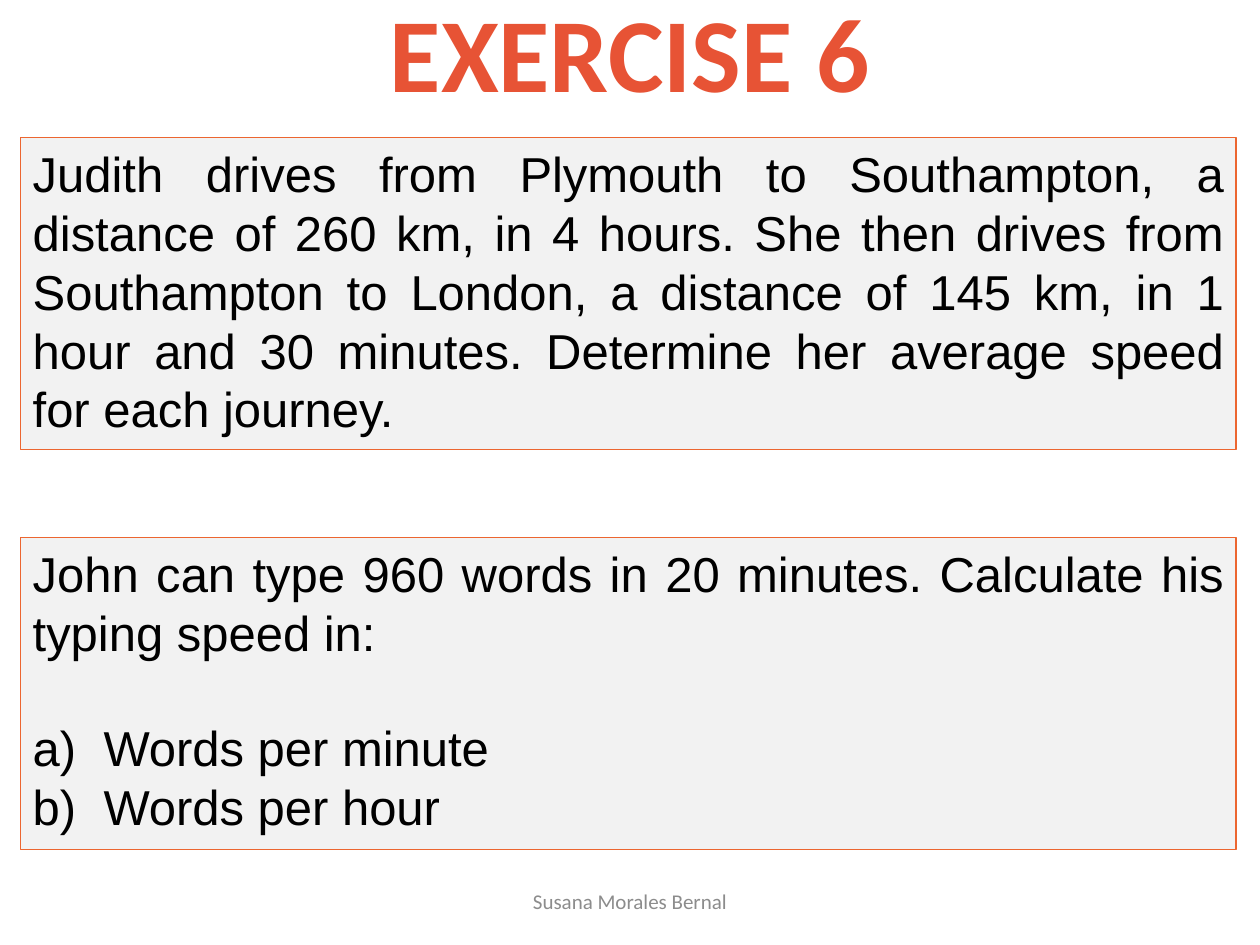
from dataclasses import dataclass

from lxml import etree
from pptx import Presentation
from pptx.dml.color import RGBColor
from pptx.enum import shapes, text
from pptx.oxml import ns
from pptx.util import Cm, Pt


@dataclass(frozen=True)
class Theme:
    title_color: RGBColor = RGBColor(0xE7, 0x53, 0x35)
    body_color: RGBColor = RGBColor(0, 0, 0)
    footer_color: RGBColor = RGBColor(0x8C, 0x8C, 0x8C)
    panel_fill: RGBColor = RGBColor(0xF2, 0xF2, 0xF2)
    panel_line: RGBColor = RGBColor(0xEC, 0x66, 0x30)
    heading_font: str = "Calibri"
    body_font: str = "Arial"
    title_size: Pt = Pt(60)
    body_size: Pt = Pt(28)
    footer_size: Pt = Pt(12)
    list_gap: Pt = Pt(32.2)
    line_width: Pt = Pt(0.75)


THEME = Theme()
PANEL_LEFT, PANEL_WIDTH, PANEL_HEIGHT = Cm(0.41), Cm(24.51), Cm(6.3)
LIST_INDENT = Cm(1.43)

JOURNEY = (
    "Judith drives from Plymouth to Southampton, a distance of 260 km, in 4 hours. "
    "She then drives from Southampton to London, a distance of 145 km, in 1 hour and "
    "30 minutes. Determine her average speed for each journey."
)
TYPING = "John can type 960 words in 20 minutes. Calculate his typing speed in:"
TYPING_UNITS = ["Words per minute", "Words per hour"]


def style_paragraph(paragraph, align, font_name, size, color, bold=False):
    paragraph.alignment = align
    for run in paragraph.runs:
        run.font.name = font_name
        run.font.size = size
        run.font.bold = bold
        run.font.color.rgb = color


def add_letter(paragraph):
    properties = paragraph._p.get_or_add_pPr()
    properties.set("marL", str(LIST_INDENT))
    properties.set("indent", str(-LIST_INDENT))
    etree.SubElement(properties, ns.qn("a:buFont"), typeface="+mj-lt")
    etree.SubElement(properties, ns.qn("a:buAutoNum"), type="alphaLcParenR")


def add_label(slide, words, left, top, width, height, size, color, bold=False):
    frame = slide.shapes.add_textbox(left, top, width, height).text_frame
    frame.word_wrap = True
    frame.vertical_anchor = text.MSO_ANCHOR.MIDDLE
    frame.text = words
    style_paragraph(frame.paragraphs[0], text.PP_ALIGN.CENTER,
                    THEME.heading_font, size, color, bold)


def add_problem(slide, top, statement, parts=()):
    panel = slide.shapes.add_shape(shapes.MSO_SHAPE.RECTANGLE, PANEL_LEFT, top,
                                   PANEL_WIDTH, PANEL_HEIGHT)
    panel.shadow.inherit = False
    panel.fill.solid()
    panel.fill.fore_color.rgb = THEME.panel_fill
    panel.line.color.rgb = THEME.panel_line
    panel.line.width = THEME.line_width

    frame = panel.text_frame
    frame.word_wrap = True
    frame.auto_size = text.MSO_AUTO_SIZE.SHAPE_TO_FIT_TEXT
    frame.vertical_anchor = text.MSO_ANCHOR.TOP
    frame.text = "\n".join([statement, *parts])
    for paragraph in frame.paragraphs:
        style_paragraph(paragraph, text.PP_ALIGN.JUSTIFY, THEME.body_font,
                        THEME.body_size, THEME.body_color)
    lettered = frame.paragraphs[1:]
    if lettered:
        lettered[0].space_before = THEME.list_gap
    for paragraph in lettered:
        add_letter(paragraph)


def main():
    deck = Presentation()
    deck.slide_width, deck.slide_height = Cm(25.4), Cm(19.05)
    slide = deck.slides.add_slide(deck.slide_layouts[6])

    add_label(slide, "EXERCISE 6", Cm(1.27), Cm(-0.58), Cm(22.86), Cm(3.18),
              THEME.title_size, THEME.title_color, bold=True)
    add_problem(slide, Cm(2.77), JOURNEY)
    add_problem(slide, Cm(10.83), TYPING, TYPING_UNITS)
    add_label(slide, "Susana Morales Bernal", Cm(8.68), Cm(17.66), Cm(8.04), Cm(1.01),
              THEME.footer_size, THEME.footer_color)

    deck.save("out.pptx")


if __name__ == "__main__":
    main()
